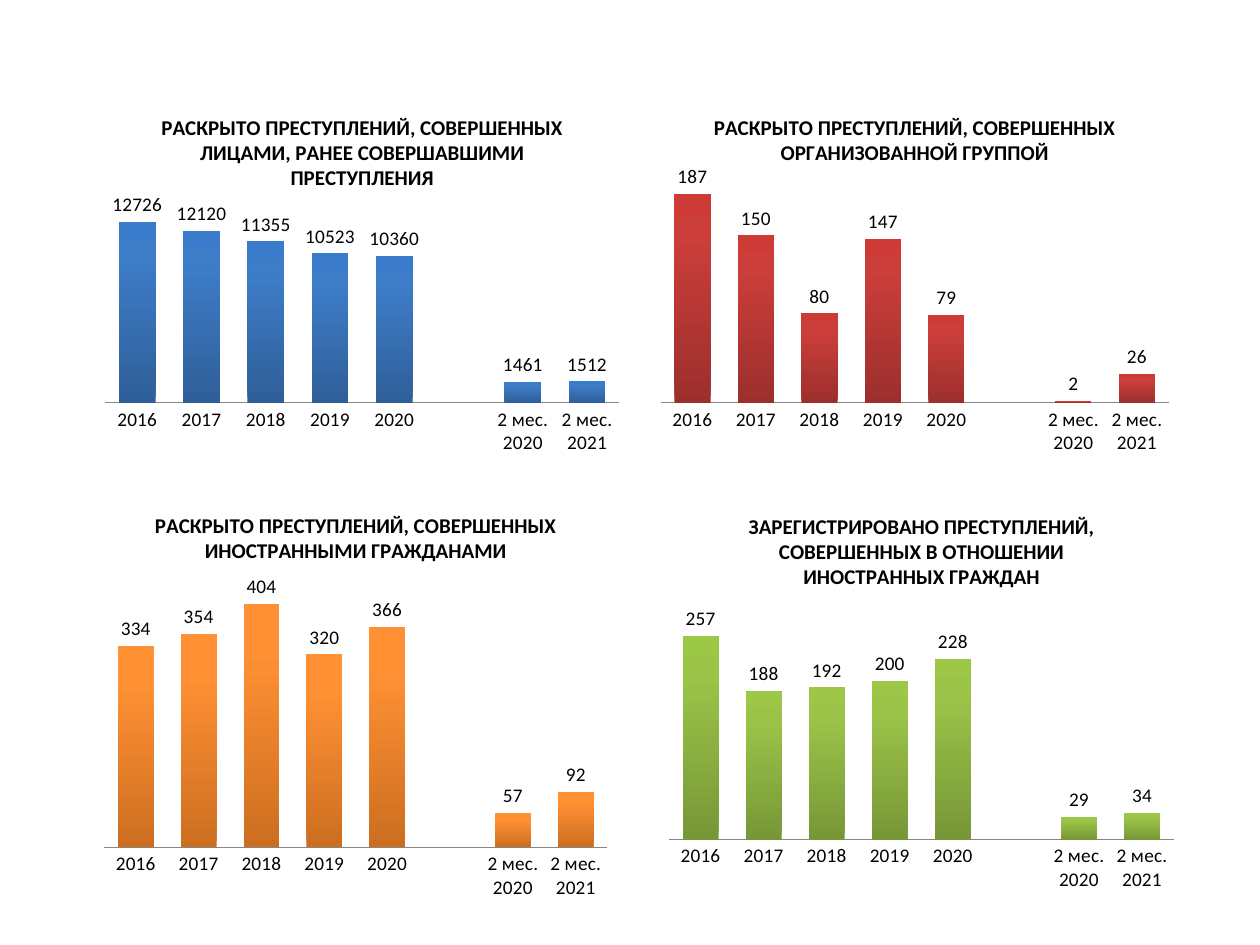
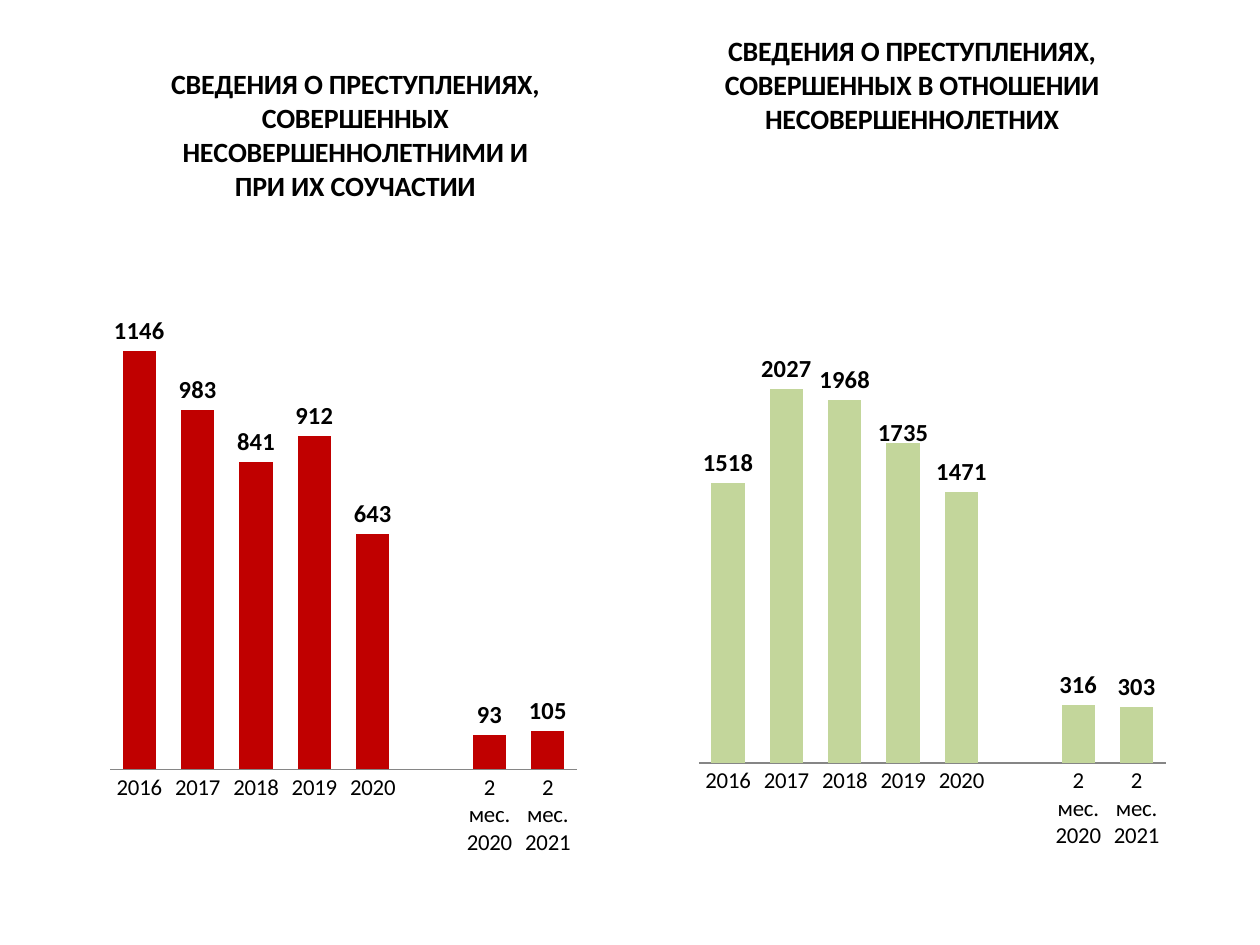
from copy import deepcopy

from lxml import etree
from pptx import Presentation
from pptx.chart.data import CategoryChartData
from pptx.dml.color import RGBColor
from pptx.enum.chart import XL_CHART_TYPE, XL_LABEL_POSITION, XL_TICK_MARK
from pptx.oxml.ns import qn
from pptx.util import Pt

COLUMNS = XL_CHART_TYPE.COLUMN_CLUSTERED
NO_TICKS = XL_TICK_MARK.NONE
OUTSIDE_END = XL_LABEL_POSITION.OUTSIDE_END

FONT = "Calibri"
COLORS = {
    "text": "000000",
    "axis": "868686",
    "blue": ("2F5F99", "3D7CC7", "3A7CCB"),
    "red": ("9C2F2D", "CB3E3A", "CE3B37"),
    "orange": ("CC6E20", "FF9034", "FF9136"),
    "green": ("779737", "9BC348", "9DC746"),
    "crimson": "C00000",
    "pale_green": "C3D69B",
}
GRADIENT_POSITIONS = (0, 0.8, 1)
PERIODS = ("2016", "2017", "2018", "2019", "2020", "", "2 мес. 2020", "2 мес. 2021")

OVERVIEW_SIZES = {"title": 12, "axis": 11, "labels": 11, "bold": False}
MINORS_SIZES = {"title": 16, "axis": 13, "labels": 14, "bold": True}

OVERVIEW = [
    {"title": "РАСКРЫТО ПРЕСТУПЛЕНИЙ, СОВЕРШЕННЫХ ЛИЦАМИ, РАНЕЕ СОВЕРШАВШИМИ ПРЕСТУПЛЕНИЯ",
     "counts": (12726, 12120, 11355, 10523, 10360, None, 1461, 1512),
     "color": "blue", "top_value": 14000,
     "frame": (54, 54.7, 306, 209.5), "plot": (0.02, 0.295, 0.96, 0.543)},
    {"title": "РАСКРЫТО ПРЕСТУПЛЕНИЙ, СОВЕРШЕННЫХ ОРГАНИЗОВАННОЙ ГРУППОЙ",
     "counts": (187, 150, 80, 147, 79, None, 2, 26),
     "color": "red", "top_value": 200,
     "frame": (371.5, 54.7, 302.4, 209.5), "plot": (0.02, 0.228, 0.96, 0.61)},
    {"title": "РАСКРЫТО ПРЕСТУПЛЕНИЙ, СОВЕРШЕННЫХ ИНОСТРАННЫМИ ГРАЖДАНАМИ",
     "counts": (334, 354, 404, 320, 366, None, 57, 92),
     "color": "orange", "top_value": 450,
     "frame": (48.2, 281.5, 310.3, 232.6), "plot": (0.037, 0.205, 0.926, 0.668)},
    {"title": "ЗАРЕГИСТРИРОВАНО ПРЕСТУПЛЕНИЙ, СОВЕРШЕННЫХ В ОТНОШЕНИИ ИНОСТРАННЫХ ГРАЖДАН",
     "counts": (257, 188, 192, 200, 228, None, 29, 34),
     "color": "green", "top_value": 300,
     "frame": (371.5, 281.5, 310.3, 254.9), "plot": (0.035, 0.245, 0.929, 0.533)},
]
MINORS = [
    {"title": "СВЕДЕНИЯ О ПРЕСТУПЛЕНИЯХ, СОВЕРШЕННЫХ НЕСОВЕРШЕННОЛЕТНИМИ И ПРИ ИХ СОУЧАСТИИ",
     "counts": (1146, 983, 841, 912, 643, None, 93, 105),
     "color": "crimson", "top_value": 1400,
     "frame": (58.3, 20.9, 289.4, 468.7), "plot": (0.016, 0.271, 0.922, 0.625)},
    {"title": "СВЕДЕНИЯ О ПРЕСТУПЛЕНИЯХ, СОВЕРШЕННЫХ В ОТНОШЕНИИ НЕСОВЕРШЕННОЛЕТНИХ",
     "counts": (1518, 2027, 1968, 1735, 1471, None, 316, 303),
     "color": "pale_green", "top_value": 2500,
     "frame": (388.1, 15.1, 289.4, 470.9), "plot": (0.039, 0.335, 0.922, 0.561),
     "title_at": (0.08, 0), "lowered_label": (3, 0.012)},
]


def rgb(value):
    return RGBColor.from_string(value)


def style_font(font, size, bold=False):
    font.name = FONT
    font.size = Pt(size)
    font.bold = bold
    font.color.rgb = rgb(COLORS["text"])


def manual_layout(**settings):
    layout = etree.Element(qn("c:layout"))
    manual = etree.SubElement(layout, qn("c:manualLayout"))
    for tag, value in settings.items():
        etree.SubElement(manual, qn(f"c:{tag}")).set("val", str(value))
    return layout


def replace_layout(parent, layout, index):
    for previous in parent.findall(qn("c:layout")):
        parent.remove(previous)
    parent.insert(index, layout)


def place_plot(chart, bounds):
    x, y, w, h = bounds
    layout = manual_layout(layoutTarget="inner", xMode="edge", yMode="edge", x=x, y=y, w=w, h=h)
    replace_layout(chart._chartSpace.find(".//" + qn("c:plotArea")), layout, 0)


def add_title(chart, text, size, position=None):
    chart.has_title = True
    title = chart.chart_title
    title.text_frame.text = text
    style_font(title.text_frame.paragraphs[0].runs[0].font, size, True)
    title.include_in_layout = False
    if position:
        x, y = position
        replace_layout(title._element, manual_layout(xMode="edge", yMode="edge", x=x, y=y), 1)


def style_axes(chart, size, top_value):
    periods = chart.category_axis
    periods.major_tick_mark = periods.minor_tick_mark = NO_TICKS
    periods.has_major_gridlines = False
    periods.format.line.color.rgb = rgb(COLORS["axis"])
    periods.format.line.width = Pt(0.75)
    style_font(periods.tick_labels.font, size)
    counts = chart.value_axis
    counts.minimum_scale = 0
    counts.maximum_scale = top_value
    counts.has_major_gridlines = False
    counts.visible = False


def fill_columns(series, color):
    fill = series.format.fill
    if isinstance(color, str):
        fill.solid()
        fill.fore_color.rgb = rgb(color)
        return
    fill.gradient()
    fill.gradient_angle = 90
    stop_list = series._element.find(".//" + qn("a:gsLst"))
    stop_list.insert(1, deepcopy(stop_list[0]))
    for stop, position, shade in zip(fill.gradient_stops, GRADIENT_POSITIONS, color):
        stop.position = position
        stop.color.rgb = rgb(shade)


def label_columns(plot, sizes, lowered_label=None):
    plot.has_data_labels = True
    labels = plot.data_labels
    labels.show_value = True
    labels.position = OUTSIDE_END
    style_font(labels.font, sizes["labels"], sizes["bold"])
    if lowered_label:
        index, drop = lowered_label
        series = plot.series[0]
        series.data_labels.show_value = True
        series.data_labels.position = OUTSIDE_END
        style_font(series.data_labels.font, sizes["labels"], sizes["bold"])
        label = series.points[index].data_label
        style_font(label.font, sizes["labels"], sizes["bold"])
        label.position = OUTSIDE_END
        element = series._element.find(".//" + qn("c:dLbl"))
        replace_layout(element, manual_layout(x=0, y=drop), 1)


def add_crime_chart(slide, topic, sizes):
    data = CategoryChartData()
    data.categories = PERIODS
    data.add_series("Series 1", topic["counts"])
    frame = [Pt(length) for length in topic["frame"]]
    chart = slide.shapes.add_chart(COLUMNS, *frame, data).chart
    style_font(chart.font, 18)
    chart.has_legend = False
    add_title(chart, topic["title"], sizes["title"], topic.get("title_at"))
    style_axes(chart, sizes["axis"], topic["top_value"])
    plot = chart.plots[0]
    plot.gap_width = 75
    plot.vary_by_categories = False
    fill_columns(plot.series[0], COLORS[topic["color"]])
    label_columns(plot, sizes, topic.get("lowered_label"))
    place_plot(chart, topic["plot"])


def main():
    deck = Presentation()
    deck.slide_width, deck.slide_height = Pt(720), Pt(540)
    blank = deck.slide_layouts[6]
    for topics, sizes in ((OVERVIEW, OVERVIEW_SIZES), (MINORS, MINORS_SIZES)):
        slide = deck.slides.add_slide(blank)
        for topic in topics:
            add_crime_chart(slide, topic, sizes)
    deck.save("out.pptx")


if __name__ == "__main__":
    main()
